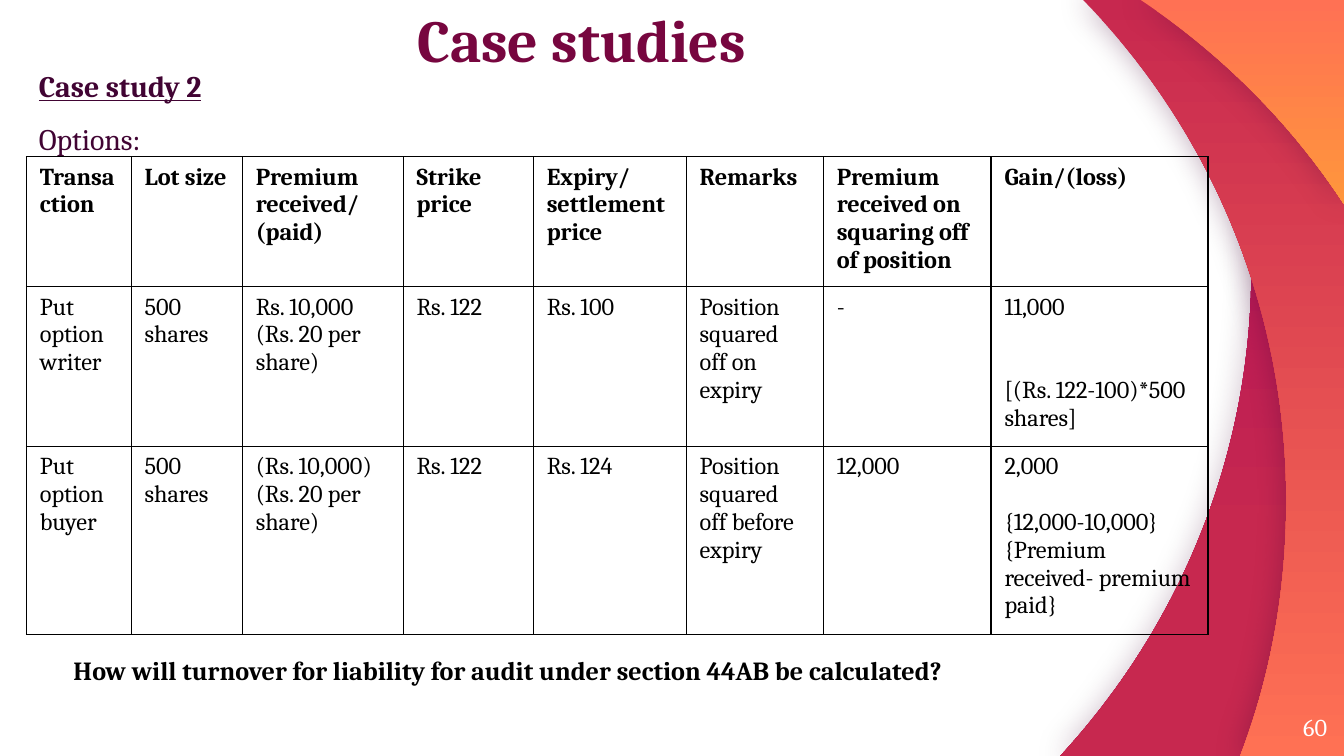
import pptx
import pptx.dml.color
import pptx.enum.text
import pptx.oxml
import pptx.oxml.ns
import pptx.util
from lxml import etree

Cm, Pt = pptx.util.Cm, pptx.util.Pt
RGB = pptx.dml.color.RGBColor.from_string
ALIGN = pptx.enum.text.PP_ALIGN
ANCHOR = pptx.enum.text.MSO_ANCHOR
NONE = pptx.enum.text.MSO_AUTO_SIZE.NONE
qn = pptx.oxml.ns.qn


class Theme:
    font = "Cambria"
    title, plum, black, white = "77063F", "410433", "000000", "FFFFFF"
    berry, crimson, coral, amber = "AC0C5C", "C7284F", "FF7154", "FF963C"
    title_size, lead_size, question_size, small_size = 32, 16, 14, 13


def format_text(tf, size, color, bold=False):
    for p in tf.paragraphs:
        for r in p.runs:
            r.font.name, r.font.size, r.font.bold = Theme.font, Pt(size), bold
            r.font.color.rgb = RGB(color)


def bend(sp, count):
    """Turn each three of the first lines of an outline into a cubic curve."""
    lines = list(sp._element.iter(qn("a:lnTo")))[:3 * count]
    for i in range(0, len(lines), 3):
        curve = etree.Element(qn("a:cubicBezTo"))
        lines[i].addprevious(curve)
        for line in lines[i:i + 3]:
            curve.append(line[0])
            line.getparent().remove(line)


prs = pptx.Presentation()
prs.slide_width, prs.slide_height = Cm(25.4), Cm(14.29)
s = prs.slides.add_slide(prs.slide_layouts[1])
s.background.fill.solid()
s.background.fill.fore_color.rgb = RGB(Theme.white)

# Curved bands on the right: start, curves, corners, top and bottom colour, stop, shadow %
bands = [
    ((22.66, 0), [((23.32, 1.63), (23.65, 3.33), (23.65, 5.08)),
                  ((23.65, 8.64), (22.28, 11.86), (20.04, 14.29))],
     [(25.4, 14.29), (25.4, 0)], Theme.berry, Theme.crimson, 0.72, 25),
    ((20.47, 0), [((22.86, 2.44), (24.31, 5.79), (24.31, 9.47)),
                  ((24.31, 11.13), (24.03, 12.75), (23.44, 14.29))],
     [(25.4, 14.29), (25.4, 0)], Theme.crimson, Theme.coral, 1, 35),
    ((21.56, 0), [((23.09, 1.02), (24.41, 2.34), (25.4, 3.86))],
     [(25.4, 0)], Theme.coral, Theme.amber, 1, 30),
]
for start, curves, corners, top_color, bottom_color, stop, opacity in bands:
    points = [start] + [point for curve in curves for point in curve] + corners
    points = [(Cm(x), Cm(y)) for x, y in points]
    builder = s.shapes.build_freeform(*points[0])
    builder.add_line_segments(points[1:], close=True)
    sp = builder.convert_to_shape()
    bend(sp, len(curves))
    sp.line.fill.background()
    sp.fill.gradient()
    sp.fill.gradient_angle = 270
    first, last = sp.fill.gradient_stops
    first.color.rgb, first.position = RGB(top_color), 0
    last.color.rgb, last.position = RGB(bottom_color), stop
    sp.shadow.inherit = False
    effects = sp._element.spPr.find(qn("a:effectLst"))
    shadow = etree.SubElement(effects, qn("a:outerShdw"), blurRad=str(Pt(16.9)),
                              dist="0", dir="0", algn="ctr", rotWithShape="0")
    color = etree.SubElement(shadow, qn("a:srgbClr"), val=Theme.plum)
    etree.SubElement(color, qn("a:alpha"), val=str(opacity * 1000))

# Title
title = s.shapes.title
title.left, title.top, title.width, title.height = Cm(0.82), Cm(0), Cm(20.35), Cm(1.42)
tf = title.text_frame
tf.text = "Case studies"
tf.auto_size, tf.vertical_anchor = NONE, ANCHOR.BOTTOM
tf.margin_left = tf.margin_top = tf.margin_right = tf.margin_bottom = 0
tf.paragraphs[0].alignment = ALIGN.CENTER
tf.paragraphs[0].line_spacing = 0.9
format_text(tf, Theme.title_size, Theme.title, True)

# Case heading
body = s.placeholders[1]
body.left, body.top, body.width, body.height = Cm(0.48), Cm(0.81), Cm(22.28), Cm(3.2)
tf = body.text_frame
tf.text = "Case study 2\nOptions:"
tf.auto_size, tf.vertical_anchor = NONE, ANCHOR.TOP
format_text(tf, Theme.lead_size, Theme.plum)
for p in tf.paragraphs:
    p.line_spacing, p.space_before = 1.5, Pt(0)
    pPr = p._p.get_or_add_pPr()
    pPr.set("marL", "0")
    pPr.set("indent", "0")
    etree.SubElement(pPr, qn("a:buNone"))
heading = tf.paragraphs[0].runs[0].font
heading.bold = heading.underline = True

# Options table
rows = [
    ["Transaction", "Lot size", "Premium received/\n(paid)", "Strike price",
     "Expiry/\nsettlement price", "Remarks",
     "Premium received on squaring off of position", "Gain/(loss)"],
    ["Put option writer", "500 shares", "Rs. 10,000\n(Rs. 20 per share)", "Rs. 122",
     "Rs. 100", "Position squared off on expiry", "-",
     "11,000\n[(Rs. 122-100)*500 shares]"],
    ["Put option buyer", "500 shares", "(Rs. 10,000)\n(Rs. 20 per share)", "Rs. 122",
     "Rs. 124", "Position squared off before expiry", "12,000",
     "2,000\n{12,000-10,000}\n{Premium received- premium paid}"],
]
widths = [1.98, 2.1, 3.04, 2.46, 2.89, 2.59, 3.17, 4.1]
heights = [2.46, 3.02, 3.55]
table = s.shapes.add_table(len(rows), len(widths), Cm(0.5), Cm(2.96),
                           Cm(sum(widths)), Cm(sum(heights))).table
table.first_row = table.horz_banding = False
for column, width in zip(table.columns, widths):
    column.width = Cm(width)
for i, (row, height) in enumerate(zip(rows, heights)):
    table.rows[i].height = Cm(height)
    for j, text in enumerate(row):
        cell = table.cell(i, j)
        cell.text_frame.text = text
        format_text(cell.text_frame, Theme.small_size, Theme.black, i == 0)
        tcPr = cell._tc.get_or_add_tcPr()
        for side in ("a:lnL", "a:lnR", "a:lnT", "a:lnB"):
            ln = etree.SubElement(tcPr, qn(side), w=str(Pt(0.75)))
            fill = etree.SubElement(ln, qn("a:solidFill"))
            etree.SubElement(fill, qn("a:srgbClr"), val=Theme.black)
        cell.fill.background()
# Workings stand apart from the result above them
for i, gap in ((1, 29.7), (2, 14.85)):
    table.cell(i, 7).text_frame.paragraphs[1].space_before = Pt(gap)

# Closing question
sp = s.shapes.add_textbox(Cm(1.14), Cm(12.24), Cm(18.29), Cm(0.86))
tf = sp.text_frame
tf.word_wrap = True
tf.text = "How will turnover for liability for audit under section 44AB be calculated?"
format_text(tf, Theme.question_size, Theme.black, True)

# Page number
sp = s.shapes.add_textbox(Cm(23.56), Cm(13.19), Cm(1.52), Cm(1.09))
tf = sp.text_frame
tf.word_wrap = True
tf.text = "60"
tf.vertical_anchor = ANCHOR.MIDDLE
tf.margin_left = tf.margin_top = tf.margin_right = tf.margin_bottom = 0
tf.paragraphs[0].alignment = ALIGN.RIGHT
format_text(tf, Theme.small_size, Theme.white)

prs.save("out.pptx")
